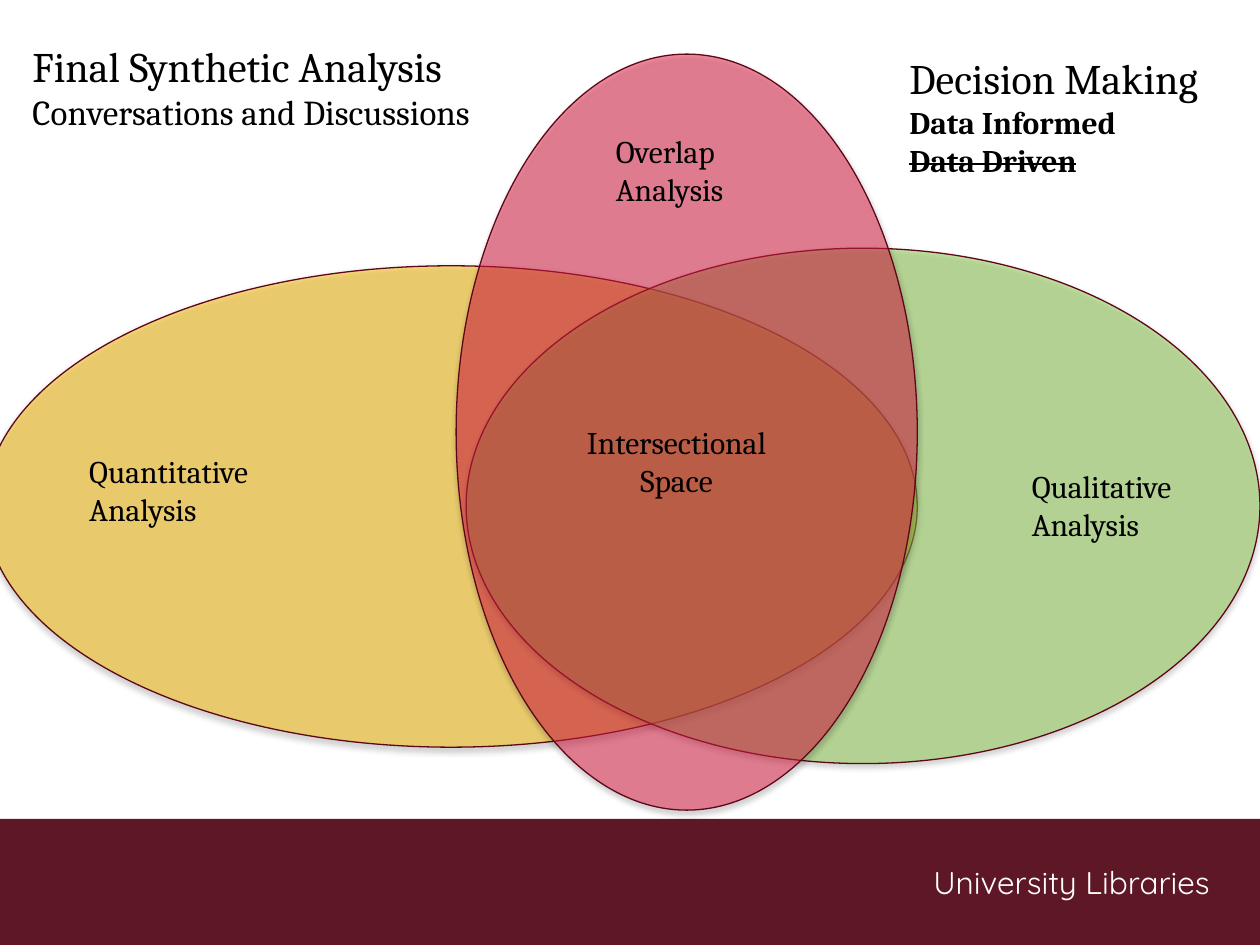
from lxml.etree import SubElement
from pptx import Presentation
from pptx.dml.color import RGBColor
from pptx.enum.shapes import MSO_SHAPE
from pptx.enum.text import MSO_AUTO_SIZE, PP_ALIGN
from pptx.oxml import parse_xml
from pptx.oxml.ns import nsdecls, qn
from pptx.util import Pt

PX = 9144
LEFT, MID, RIGHT = PP_ALIGN.LEFT, PP_ALIGN.CENTER, PP_ALIGN.RIGHT
SHADOW = (
    f'<a:effectLst {nsdecls("a")}>'
    '<a:outerShdw blurRad="39370" dist="22860" dir="5400000" rotWithShape="0">'
    '<a:srgbClr val="000000"><a:alpha val="35000"/></a:srgbClr>'
    '</a:outerShdw></a:effectLst>'
)


def paint(fill, color):
    fill.solid()
    fill.fore_color.rgb = RGBColor.from_string(color)


def write(slide, box, lines, align=LEFT, wrap=False, face="Cambria", color="000000"):
    frame = slide.shapes.add_textbox(*[n * PX for n in box]).text_frame
    frame.word_wrap = wrap
    frame.auto_size = MSO_AUTO_SIZE.SHAPE_TO_FIT_TEXT
    para = frame.paragraphs[0]
    para.alignment = align
    for i, (text, size, bold, strike) in enumerate(lines):
        if i:
            para.add_line_break()
        run = para.add_run()
        run.text = text
        run.font.size = Pt(size)
        run.font.name = face
        run.font.bold = bold
        paint(run.font.fill, color)
        if strike:
            run.font._element.set("strike", "sngStrike")


deck = Presentation()
deck.slide_width = 1000 * PX
deck.slide_height = 750 * PX
slide = deck.slides.add_slide(deck.slide_layouts[6])

band = slide.shapes.add_shape(MSO_SHAPE.RECTANGLE, 0, 650 * PX, 1000 * PX, 100 * PX)
band.shadow.inherit = False
paint(band.fill, "5D1725")
band.line.fill.background()
write(slide, (591, 680, 379, 40), [("University Libraries", 18, False, False)],
      RIGHT, True, "Quicksand", "FFFFFF")

ovals = [
    ((-12, 211, 740, 382), 0, "FFC000"),
    ((370, 197, 630, 409), 0, "92D050"),
    ((245, 160, 600, 366), 90, "EA2048"),
]
for box, turn, color in ovals:
    oval = slide.shapes.add_shape(MSO_SHAPE.OVAL, *[n * PX for n in box])
    oval.rotation = turn
    paint(oval.fill, color)
    tint = oval._element.spPr.find(qn("a:solidFill"))[0]
    SubElement(tint, qn("a:alpha")).set("val", "49000")
    paint(oval.line.fill, "5E0718")
    oval.line.width = Pt(0.75)
    oval._element.spPr.append(parse_xml(SHADOW))

labels = [
    ((61, 354, 255, 71), ("Quantitative", "Analysis"), LEFT, True),
    ((809, 366, 201, 71), ("Qualitative", "Analysis"), LEFT, True),
    ((479, 100, 117, 71), ("Overlap", "Analysis"), LEFT, False),
    ((451, 331, 172, 71), ("Intersectional", "Space"), MID, False),
]
for box, words, align, wrap in labels:
    write(slide, box, [(word, 18, False, False) for word in words], align, wrap)

write(slide, (16, 27, 406, 125), [
    ("Final Synthetic Analysis", 24, False, False),
    ("Conversations and Discussions", 20, False, False),
])
write(slide, (712, 37, 273, 111), [
    ("Decision Making", 24, False, False),
    ("Data Informed", 18, True, False),
    ("Data Driven", 18, True, True),
])

deck.save("out.pptx")
